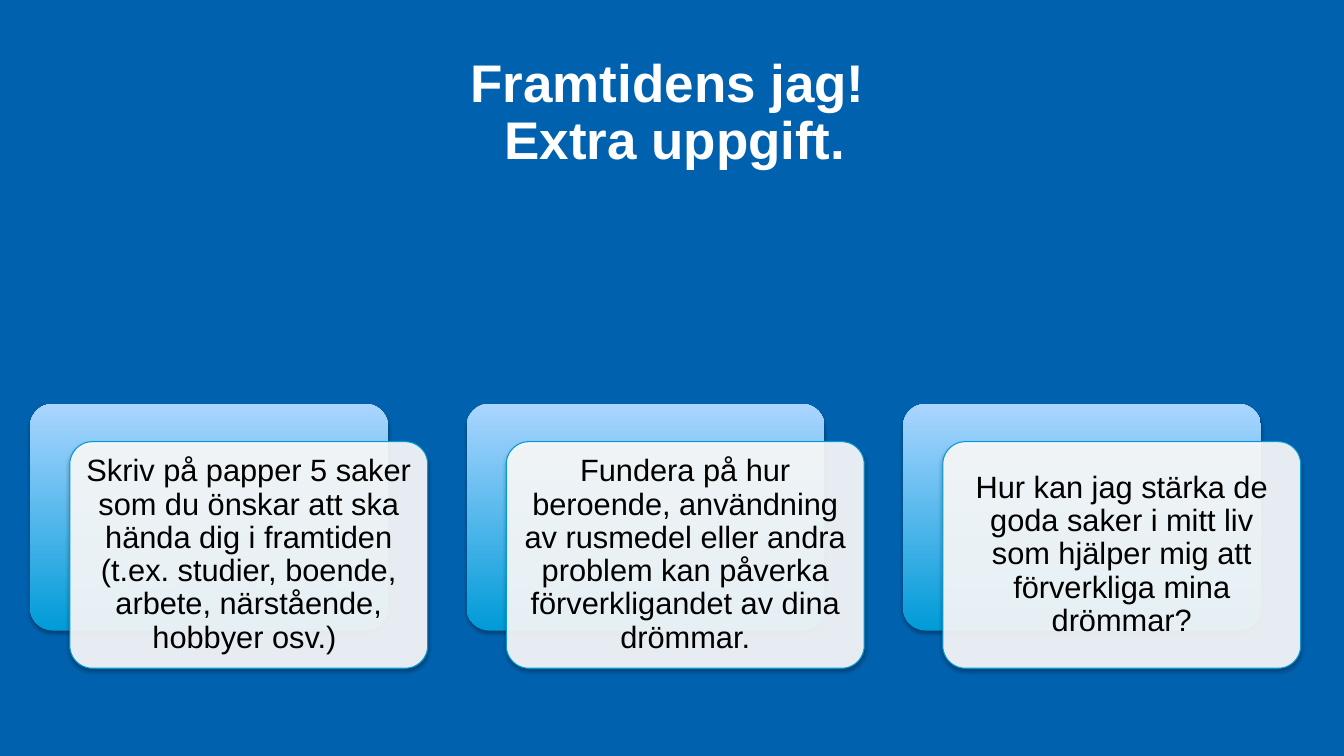
from lxml import etree
from pptx import Presentation
from pptx.dml.color import RGBColor
from pptx.enum.shapes import MSO_SHAPE
from pptx.enum.text import MSO_ANCHOR, PP_ALIGN
from pptx.oxml.ns import qn
from pptx.util import Cm, Pt

# Content
TITLE = "Framtidens jag! \vExtra uppgift."
CARDS = [
    "Skriv på papper 5 saker som du önskar att ska hända dig i framtiden "
    "(t.ex. studier, boende, arbete, närstående, hobbyer osv.) ",
    "Fundera på hur beroende, användning av rusmedel eller andra problem "
    "kan påverka förverkligandet av dina drömmar.",
    "Hur kan jag stärka de goda saker i mitt liv som hjälper mig att "
    "förverkliga mina drömmar?",
]

# Style
FONT = "Arial"
BLUE = RGBColor(0x00, 0x62, 0xAE)
CYAN = RGBColor(0x00, 0x9B, 0xD8)
LIGHT_BLUE = RGBColor(0xAA, 0xD5, 0xFF)
WHITE = RGBColor(0xFF, 0xFF, 0xFF)
BLACK = RGBColor(0x00, 0x00, 0x00)
ROUNDED = MSO_SHAPE.ROUNDED_RECTANGLE
CENTER = PP_ALIGN.CENTER
TOP, MIDDLE = MSO_ANCHOR.TOP, MSO_ANCHOR.MIDDLE

# Layout in centimetres
CARD_LEFT, CARD_TOP = 0.76, 10.18
CARD_WIDTH, CARD_HEIGHT = 9.02, 5.71
CARD_PITCH = 11.0
FRONT_SHIFT_X, FRONT_SHIFT_Y = 1.0, 0.95


def write_text(shape, text, size, color, anchor, inset, bold=False):
    frame = shape.text_frame
    frame.word_wrap = True
    frame.vertical_anchor = anchor
    frame.margin_left = frame.margin_right = Cm(inset)
    frame.margin_top = frame.margin_bottom = Cm(inset)
    frame.text = text
    paragraph = frame.paragraphs[0]
    paragraph.alignment = CENTER
    paragraph.line_spacing = 0.9
    for run in paragraph.runs:
        run.font.name = FONT
        run.font.size = Pt(size)
        run.font.bold = bold
        run.font.color.rgb = color


def add_color(parent, color, alpha):
    element = etree.SubElement(parent, qn("a:srgbClr"), val=str(color))
    etree.SubElement(element, qn("a:alpha"), val=str(alpha * 1000))


def add_rounded_box(slide, left, top):
    shape = slide.shapes.add_shape(
        ROUNDED, Cm(left), Cm(top), Cm(CARD_WIDTH), Cm(CARD_HEIGHT))
    shape.adjustments[0] = 0.1
    shape.shadow.inherit = False
    effects = shape._element.spPr.find(qn("a:effectLst"))
    shadow = etree.SubElement(
        effects, qn("a:outerShdw"), blurRad=str(Pt(3.1)), dist=str(Pt(1.8)),
        dir="5400000", rotWithShape="0")
    add_color(shadow, BLACK, 35)
    return shape


def add_card(slide, left, text):
    # Gradient panel behind
    panel = add_rounded_box(slide, left, CARD_TOP)
    panel.line.fill.background()
    panel.fill.gradient()
    panel.fill.gradient_angle = 90
    for stop, color in zip(panel.fill.gradient_stops, (CYAN, LIGHT_BLUE)):
        stop.color.rgb = color

    # Translucent text card in front
    card = add_rounded_box(slide, left + FRONT_SHIFT_X, CARD_TOP + FRONT_SHIFT_Y)
    card.fill.solid()
    card.fill.fore_color.rgb = WHITE
    solid_fill = card._element.spPr.find(qn("a:solidFill"))
    solid_fill.clear()
    add_color(solid_fill, WHITE, 90)
    card.line.color.rgb = CYAN
    card.line.width = Pt(0.75)
    write_text(card, text, 22, BLACK, MIDDLE, 0.23)


def main():
    presentation = Presentation()
    presentation.slide_width, presentation.slide_height = Cm(33.87), Cm(19.05)
    slide = presentation.slides.add_slide(presentation.slide_layouts[6])
    slide.background.fill.solid()
    slide.background.fill.fore_color.rgb = BLUE

    # Title
    title = slide.shapes.add_textbox(Cm(3.28), Cm(1.42), Cm(27.46), Cm(2.74))
    write_text(title, TITLE, 37.8, WHITE, TOP, 0, bold=True)

    # Row of cards
    for index, text in enumerate(CARDS):
        add_card(slide, CARD_LEFT + index * CARD_PITCH, text)

    presentation.save("out.pptx")


if __name__ == "__main__":
    main()
